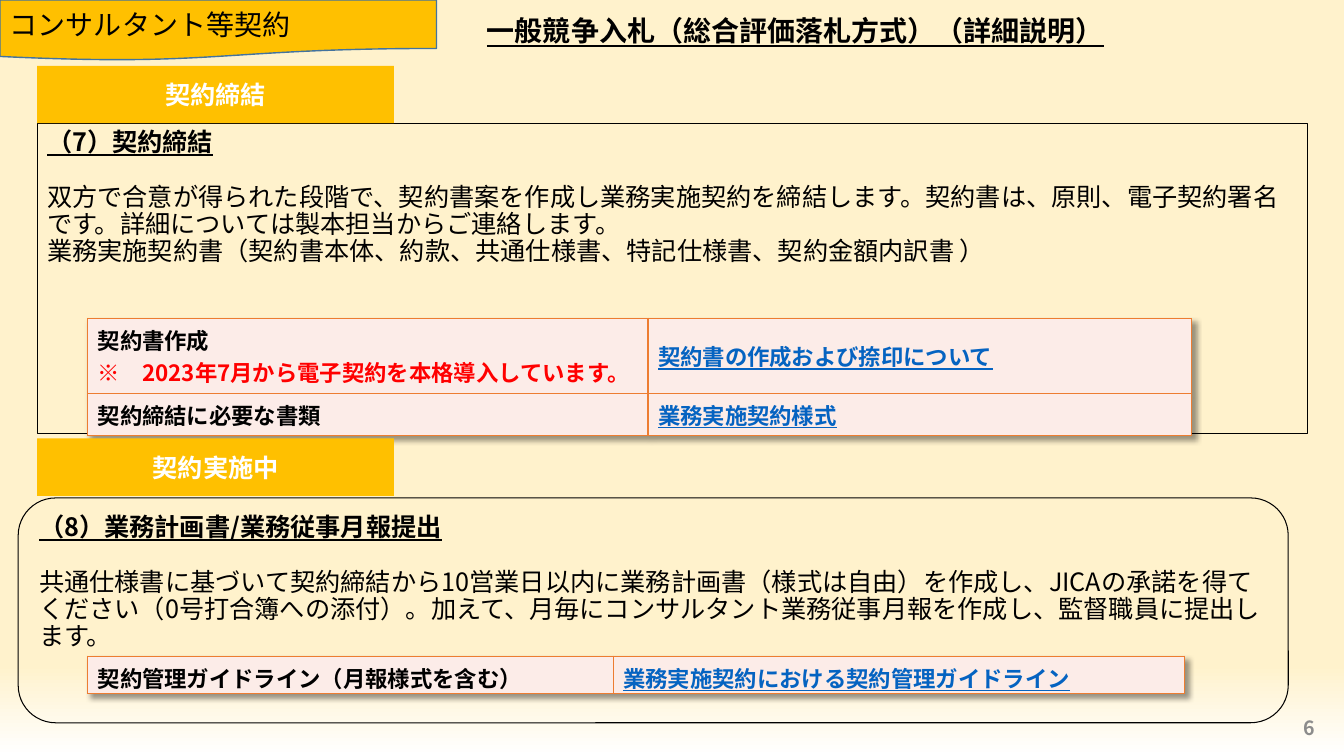
from lxml import etree
from pptx import Presentation
from pptx.dml.color import RGBColor
from pptx.enum.shapes import MSO_SHAPE
from pptx.enum.text import MSO_ANCHOR, MSO_AUTO_SIZE, PP_ALIGN
from pptx.oxml import parse_xml
from pptx.oxml.ns import nsdecls, qn
from pptx.util import Pt

COLORS = {
    "cream": "FFF2CC", "white": "FFFFFF", "black": "000000", "gold": "FFC000",
    "navy": "43739E", "orange": "ED7D31", "pink": "FCECE8", "red": "FF0000",
    "link": "0563C1", "gray": "8C8C8C",
}
FONT = "Noto Sans CJK JP"
STEP_LEFT = 26.6
BOX_WIDTH = 907.2
TABLE_LEFT = 62.6


def color(name):
    return RGBColor.from_string(COLORS[name])


def write(frame, text, size=18, ink="black", bold=False, underline=False,
          align=PP_ALIGN.LEFT, leading=None, before=0, latin=FONT):
    """Fill the empty first paragraph, or append another one."""
    paragraph = frame.paragraphs[0]
    if paragraph.runs:
        paragraph = frame.add_paragraph()
    paragraph.alignment = align
    if leading:
        paragraph.line_spacing = Pt(leading)
    if before:
        paragraph.space_before = Pt(before)
    run = paragraph.add_run()
    run.text = text
    font = run.font
    font.size, font.bold, font.underline = Pt(size), bold, underline
    font.color.rgb = color(ink)
    font.name = latin
    etree.SubElement(font._element, qn("a:ea"), typeface=FONT)


def add_panel(slide, preset, left, top, width, height, fill=None, line=None,
              weight=0.75, anchor=MSO_ANCHOR.TOP):
    panel = slide.shapes.add_shape(preset, Pt(left), Pt(top), Pt(width), Pt(height))
    panel.shadow.inherit = False
    if fill:
        panel.fill.solid()
        panel.fill.fore_color.rgb = color(fill)
    else:
        panel.fill.background()
    if line:
        panel.line.color.rgb = color(line)
        panel.line.width = Pt(weight)
    else:
        panel.line.fill.background()
    panel.text_frame.word_wrap = True
    panel.text_frame.vertical_anchor = anchor
    return panel.text_frame


def add_step_label(slide, top, text):
    label = add_panel(slide, MSO_SHAPE.RECTANGLE, STEP_LEFT, top, 254.9, 41,
                      fill="gold", anchor=MSO_ANCHOR.MIDDLE)
    write(label, text, ink="white", bold=True, align=PP_ALIGN.CENTER)


def add_step_box(slide, preset, left, top, height, heading, details):
    box = add_panel(slide, preset, left, top, BOX_WIDTH, height, line="black")
    leading = 19.6
    write(box, heading, bold=True, underline=True, leading=leading)
    for index, detail in enumerate(details):
        write(box, detail, leading=leading, before=0 if index else leading)


def outline_cell(cell):
    properties = cell._tc.get_or_add_tcPr()
    for position, side in enumerate(("lnL", "lnR", "lnT", "lnB")):
        properties.insert(position, parse_xml(
            f'<a:{side} {nsdecls("a")} w="12700"><a:solidFill>'
            f'<a:srgbClr val="{COLORS["orange"]}"/></a:solidFill></a:{side}>'))


def add_link_table(slide, top, widths, heights, rows, bottom=3.6, latin=FONT):
    """Each row pairs a list of (text, ink) lines with the link text."""
    frame = slide.shapes.add_table(len(rows), 2, Pt(TABLE_LEFT), Pt(top),
                                   Pt(sum(widths)), Pt(sum(heights)))
    table = frame.table
    table.first_row = table.horz_banding = False
    table._tbl.tblPr.insert(0, parse_xml(
        f'<a:effectLst {nsdecls("a")}><a:outerShdw blurRad="50800" dist="38100" '
        'dir="2700000" algn="tl" rotWithShape="0"><a:srgbClr val="000000">'
        '<a:alpha val="40000"/></a:srgbClr></a:outerShdw></a:effectLst>'))
    for column, width in zip(table.columns, widths):
        column.width = Pt(width)
    for row, height in zip(table.rows, heights):
        row.height = Pt(height)
    for row, (lines, link) in zip(table.rows, rows):
        for cell in row.cells:
            cell.fill.solid()
            cell.fill.fore_color.rgb = color("pink")
            cell.vertical_anchor = MSO_ANCHOR.MIDDLE
            cell.margin_right, cell.margin_bottom = 0, Pt(bottom)
            outline_cell(cell)
        for text, ink in lines:
            write(row.cells[0].text_frame, text, size=16, ink=ink, bold=True, latin=latin)
        write(row.cells[1].text_frame, link, size=16, ink="link", bold=True,
              underline=True, latin=latin)


def paint_background(slide):
    fill = slide.background.fill
    fill.gradient()
    fill.gradient_angle = 270
    for stop, (position, name) in zip(fill.gradient_stops, ((0.88, "cream"), (1, "white"))):
        stop.position = position
        stop.color.rgb = color(name)


def add_title(slide, text):
    title = slide.shapes.title
    title.left, title.top, title.width, title.height = Pt(340.6), Pt(0), Pt(476.6), Pt(44)
    frame = title.text_frame
    frame.word_wrap = True
    frame.auto_size = MSO_AUTO_SIZE.NONE
    frame.vertical_anchor = MSO_ANCHOR.MIDDLE
    write(frame, text, size=20, bold=True, underline=True)


def add_page_number(slide, number):
    box = slide.shapes.add_textbox(Pt(730.8), Pt(505.4), Pt(216), Pt(28.8))
    box.text_frame.word_wrap = True
    box.text_frame.vertical_anchor = MSO_ANCHOR.MIDDLE
    write(box.text_frame, number, size=14, ink="gray", bold=True, align=PP_ALIGN.RIGHT)


def main():
    deck = Presentation()
    deck.slide_width, deck.slide_height = Pt(960), Pt(540)
    slide = deck.slides.add_slide(deck.slide_layouts[5])
    paint_background(slide)

    # Header
    category = add_panel(slide, MSO_SHAPE.FLOWCHART_DOCUMENT, 0, 0, 311.8, 43.2,
                         fill="gold", line="navy", weight=1, anchor=MSO_ANCHOR.MIDDLE)
    write(category, "コンサルタント等契約", size=20)
    add_title(slide, "一般競争入札（総合評価落札方式）（詳細説明）")

    # Signing the contract
    add_step_box(slide, MSO_SHAPE.RECTANGLE, STEP_LEFT, 88.5, 221, "（7）契約締結", [
        "双方で合意が得られた段階で、契約書案を作成し業務実施契約を締結します。"
        "契約書は、原則、電子契約署名です。詳細については製本担当からご連絡します。",
        "業務実施契約書（契約書本体、約款、共通仕様書、特記仕様書、契約金額内訳書 ）",
    ])
    add_step_label(slide, 47, "契約締結")
    add_link_table(slide, 227.5, (400.3, 388.1), (53, 30), [
        ([("契約書作成", "black"),
          ("※　2023年7月から電子契約を本格導入しています。", "red")],
         "契約書の作成および捺印について"),
        ([("契約締結に必要な書類", "black")], "業務実施契約様式"),
    ])

    # Carrying out the contract
    add_step_label(slide, 313.2, "契約実施中")
    add_step_box(slide, MSO_SHAPE.ROUNDED_RECTANGLE, 13, 355.7, 160.6,
                 "（8）業務計画書/業務従事月報提出", [
        "共通仕様書に基づいて契約締結から10営業日以内に業務計画書（様式は自由）を作成し、"
        "JICAの承諾を得てください（0号打合簿への添付）。加えて、月毎にコンサルタント"
        "業務従事月報を作成し、監督職員に提出します。",
    ])
    add_link_table(slide, 468.7, (375.5, 408), (26.4,), [
        ([("契約管理ガイドライン（月報様式を含む）", "black")],
         "業務実施契約における契約管理ガイドライン"),
    ], bottom=0, latin="Arial")

    add_page_number(slide, "6")
    deck.save("out.pptx")


if __name__ == "__main__":
    main()
